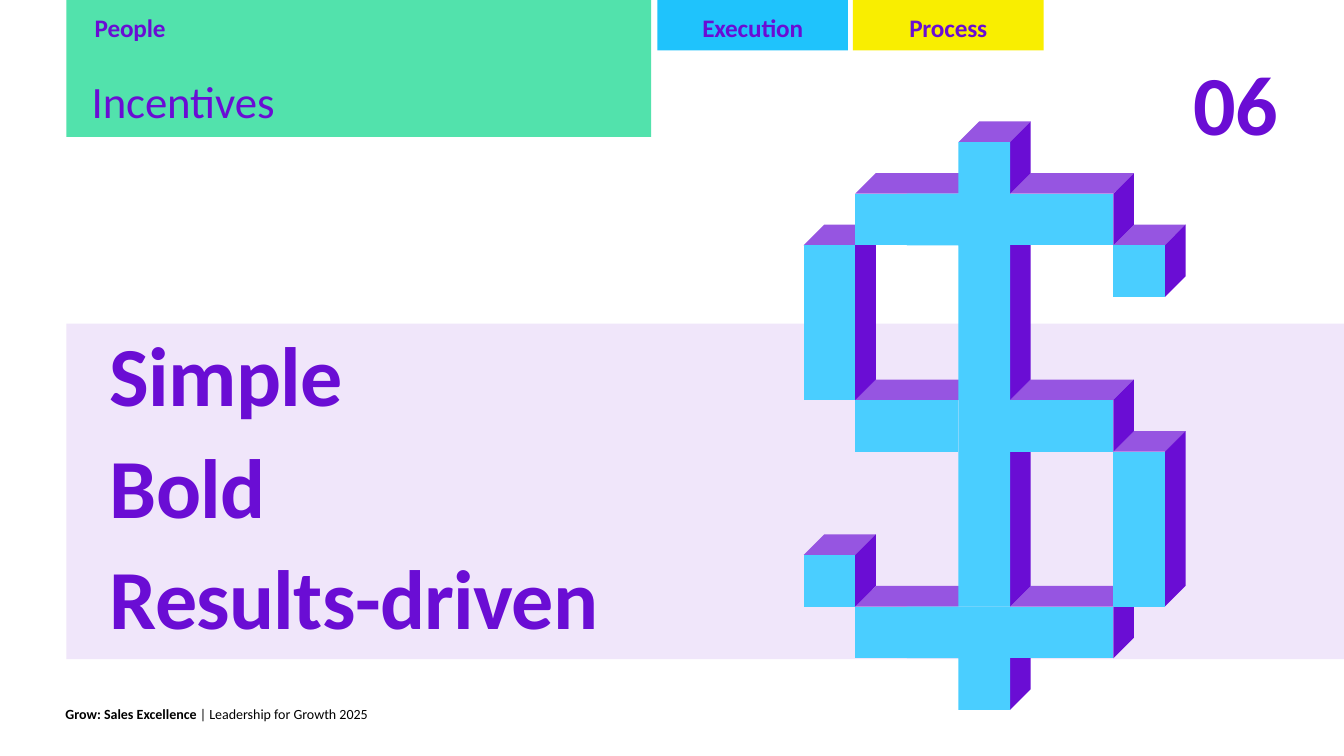
from pptx import Presentation
from pptx.dml.color import RGBColor
from pptx.enum.shapes import MSO_SHAPE
from pptx.enum.text import MSO_ANCHOR, MSO_AUTO_SIZE, PP_ALIGN
from pptx.util import Inches, Pt

PURPLE = RGBColor(0x6A, 0x0D, 0xD4)
VIOLET = RGBColor(0x96, 0x55, 0xE1)
LAVENDER = RGBColor(0xF0, 0xE6, 0xFA)
SKY = RGBColor(0x4A, 0xCE, 0xFF)
BLUE = RGBColor(0x1F, 0xC3, 0xFC)
GREEN = RGBColor(0x52, 0xE2, 0xAC)
YELLOW = RGBColor(0xF9, 0xEE, 0x00)
BLACK = RGBColor(0x00, 0x00, 0x00)

CUBE = 0.512
DEPTH = 0.4
SIGN_LEFT = 7.97
SIGN_TOP = 1.41

TOP_FACES = [
    (3, 0, 1), (4, 1, 2), (6, 2, 1), (1, 1, 2), (0, 2, 1), (1, 5, 2),
    (4, 5, 2), (6, 6, 1), (4, 9, 2), (1, 9, 2), (0, 8, 1),
]
SIDE_FACES = [
    (4, 0, 1), (6, 1, 1), (7, 2, 1), (4, 2, 3), (6, 5, 1), (7, 6, 3),
    (6, 9, 1), (4, 10, 1), (4, 6, 3), (1, 8, 1), (1, 2, 3),
]
FRONT_BLOCKS = [
    (6, 6, 1, 3), (6, 2, 1, 1), (5, 9, 1, 1), (5, 5, 1, 1), (5, 1, 1, 1),
    (4, 9, 1, 1), (4, 5, 1, 1), (2, 5, 1, 1), (1, 9, 1, 1), (1, 5, 1, 1),
    (1, 1, 1, 1), (0, 8, 1, 1), (0, 2, 1, 3), (4, 1, 1, 1),
]
LOWER_STEM = [(4, 9), (2, 9), (2, 10), (3, 10), (3, 11), (4, 11)]
UPPER_STEM = [(4, 0), (3, 0), (3, 1), (2, 1), (2, 2), (3, 2), (3, 5), (4, 5)]
MIDDLE_STEM = [(4, 5), (3, 5), (3, 9), (4, 9)]


class SlideBuilder:
    def __init__(self, slide, font_name="Calibri"):
        self.slide = slide
        self.font_name = font_name

    def paint(self, shape, color):
        shape.shadow.inherit = False
        shape.fill.solid()
        shape.fill.fore_color.rgb = color
        shape.line.fill.background()

    def rectangle(self, left, top, width, height, color):
        shape = self.slide.shapes.add_shape(
            MSO_SHAPE.RECTANGLE, Inches(left), Inches(top), Inches(width), Inches(height))
        self.paint(shape, color)
        return shape

    def outline(self, contours, color):
        builder = None
        for contour in contours:
            points = [(Inches(SIGN_LEFT + column * CUBE), Inches(SIGN_TOP + row * CUBE))
                      for column, row in contour]
            if builder is None:
                builder = self.slide.shapes.build_freeform(*points[0])
            else:
                builder.move_to(*points[0])
            builder.add_line_segments(points[1:], close=True)
        self.paint(builder.convert_to_shape(), color)

    def text_box(self, left, top, width, height):
        return self.slide.shapes.add_textbox(
            Inches(left), Inches(top), Inches(width), Inches(height))

    def frame(self, shape, lines, inset_top=0, inset_bottom=0, anchor=MSO_ANCHOR.TOP):
        text_frame = shape.text_frame
        text_frame.text = "\n".join(lines)
        text_frame.word_wrap = True
        text_frame.auto_size = MSO_AUTO_SIZE.SHAPE_TO_FIT_TEXT
        text_frame.vertical_anchor = anchor
        text_frame.margin_left = text_frame.margin_right = 0
        text_frame.margin_top = Inches(inset_top)
        text_frame.margin_bottom = Inches(inset_bottom)
        return text_frame.paragraphs

    def style(self, paragraph, size, bold=True, color=PURPLE, spacing=0,
              align=PP_ALIGN.LEFT, indent=0):
        paragraph.alignment = align
        paragraph._p.get_or_add_pPr().set("marL", str(Inches(indent)))
        for run in paragraph.runs:
            run.font.name = self.font_name
            run.font.size = Pt(size)
            run.font.bold = bold
            run.font.color.rgb = color
            run._r.get_or_add_rPr().set("spc", str(round(spacing * 100)))

    def tab(self, left, label, color):
        shape = self.rectangle(left, 0, 1.89, 0.5, color)
        paragraph = self.frame(shape, [label], 0.12, 0.08)[0]
        self.style(paragraph, 18, spacing=-0.1, align=PP_ALIGN.CENTER)

    def dollar_sign(self):
        for column, row, length in TOP_FACES:
            end = column + length
            self.outline([[(end + DEPTH, row - DEPTH), (column + DEPTH, row - DEPTH),
                           (column, row), (end, row)]], VIOLET)
        for column, row, length in SIDE_FACES:
            end = row + length
            self.outline([[(column + DEPTH, row - DEPTH), (column, row),
                           (column, end), (column + DEPTH, end - DEPTH)]], PURPLE)
        for column, row, width, height in FRONT_BLOCKS:
            right, bottom = column + width, row + height
            self.outline([[(right, row), (column, row), (column, bottom), (right, bottom)]], SKY)
        self.outline([LOWER_STEM], SKY)
        self.outline([MIDDLE_STEM, UPPER_STEM], SKY)


def main():
    presentation = Presentation()
    presentation.slide_width = Inches(13.33)
    presentation.slide_height = Inches(7.5)
    builder = SlideBuilder(presentation.slides.add_slide(presentation.slide_layouts[6]))

    builder.rectangle(0.66, 3.21, 12.67, 3.33, LAVENDER)
    builder.dollar_sign()

    values = builder.text_box(1.08, 3.09, 6.82, 3.36)
    paragraphs = builder.frame(values, ["Simple", "Bold", "Results-driven"], 0.15)
    for position, paragraph in enumerate(paragraphs):
        builder.style(paragraph, 60, spacing=-0.5, indent=0.01)
        paragraph.line_spacing = Pt(69)
        paragraph.space_before = Pt(10.8 if position else 0)

    number = builder.text_box(11.83, 0.5, 1.18, 1.02)
    builder.style(builder.frame(number, ["06"], 0.01)[0], 60, spacing=-0.6, indent=0.01)

    header = builder.rectangle(0.66, 0, 5.8, 1.36, GREEN)
    section, title = builder.frame(header, ["People", "Incentives"], 0.12, 0.08)
    builder.style(section, 18, spacing=-0.1, indent=0.28)
    builder.style(title, 32, bold=False, spacing=-0.1, indent=0.25)
    title.space_before = Pt(22.7)

    builder.tab(6.52, "Execution", BLUE)
    builder.tab(8.46, "Process", YELLOW)

    footer = builder.text_box(0.65, 7, 4.27, 0.17)
    paragraph = builder.frame(footer, ["Grow: Sales Excellence "], anchor=MSO_ANCHOR.MIDDLE)[0]
    paragraph.add_run().text = "| Leadership for Growth 2025"
    builder.style(paragraph, 10, color=BLACK)
    paragraph.runs[1].font.bold = False

    presentation.save("out.pptx")


if __name__ == "__main__":
    main()
